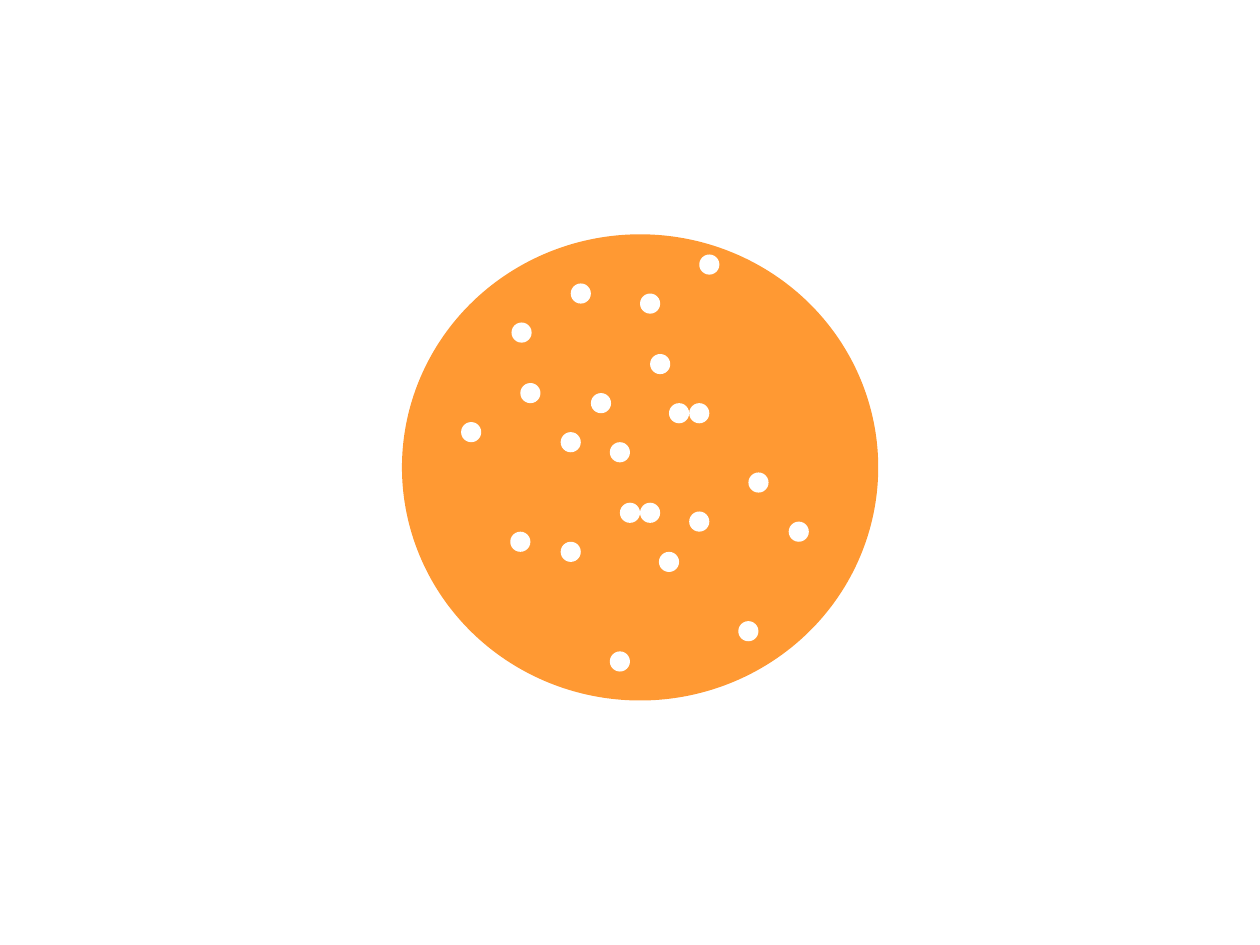
from typing import NamedTuple

from pptx import Presentation
from pptx.dml.color import RGBColor
from pptx.enum.shapes import MSO_SHAPE
from pptx.util import Inches

COLORS = {"disc": "FF9933", "dot": "FFFFFF"}
DOT_SIZE = 0.16


class Point(NamedTuple):
    x: float
    y: float


# Every cluster has three dots, placed relative to its first one
CLUSTER = [Point(0, 0), Point(-0.47, 0.31), Point(-0.08, 1.18)]
CLUSTER_STARTS = [
    Point(4.53, 2.25), Point(4.13, 3.04),
    Point(5.31, 3.2), Point(4.92, 3.99),
    Point(5.55, 2.02), Point(5.16, 2.81),
    Point(5.94, 3.75),
]
SINGLE_DOT = Point(6.26, 4.14)


def add_oval(s, at: Point, width: float, height: float, color: str) -> None:
    sp = s.shapes.add_shape(MSO_SHAPE.OVAL, Inches(at.x), Inches(at.y),
                            Inches(width), Inches(height))
    sp.shadow.inherit = False
    sp.fill.solid()
    sp.fill.fore_color.rgb = RGBColor.from_string(COLORS[color])
    sp.line.fill.background()


def main() -> None:
    prs = Presentation()
    prs.slide_width, prs.slide_height = Inches(10), Inches(7.5)
    s = prs.slides.add_slide(prs.slide_layouts[6])

    # Orange disc
    add_oval(s, Point(3.19, 1.86), 3.78, 3.7, "disc")

    # White dots
    dots = [Point(start.x + step.x, start.y + step.y)
            for start in CLUSTER_STARTS for step in CLUSTER]
    for dot in dots + [SINGLE_DOT]:
        add_oval(s, dot, DOT_SIZE, DOT_SIZE, "dot")

    prs.save("out.pptx")


if __name__ == "__main__":
    main()
